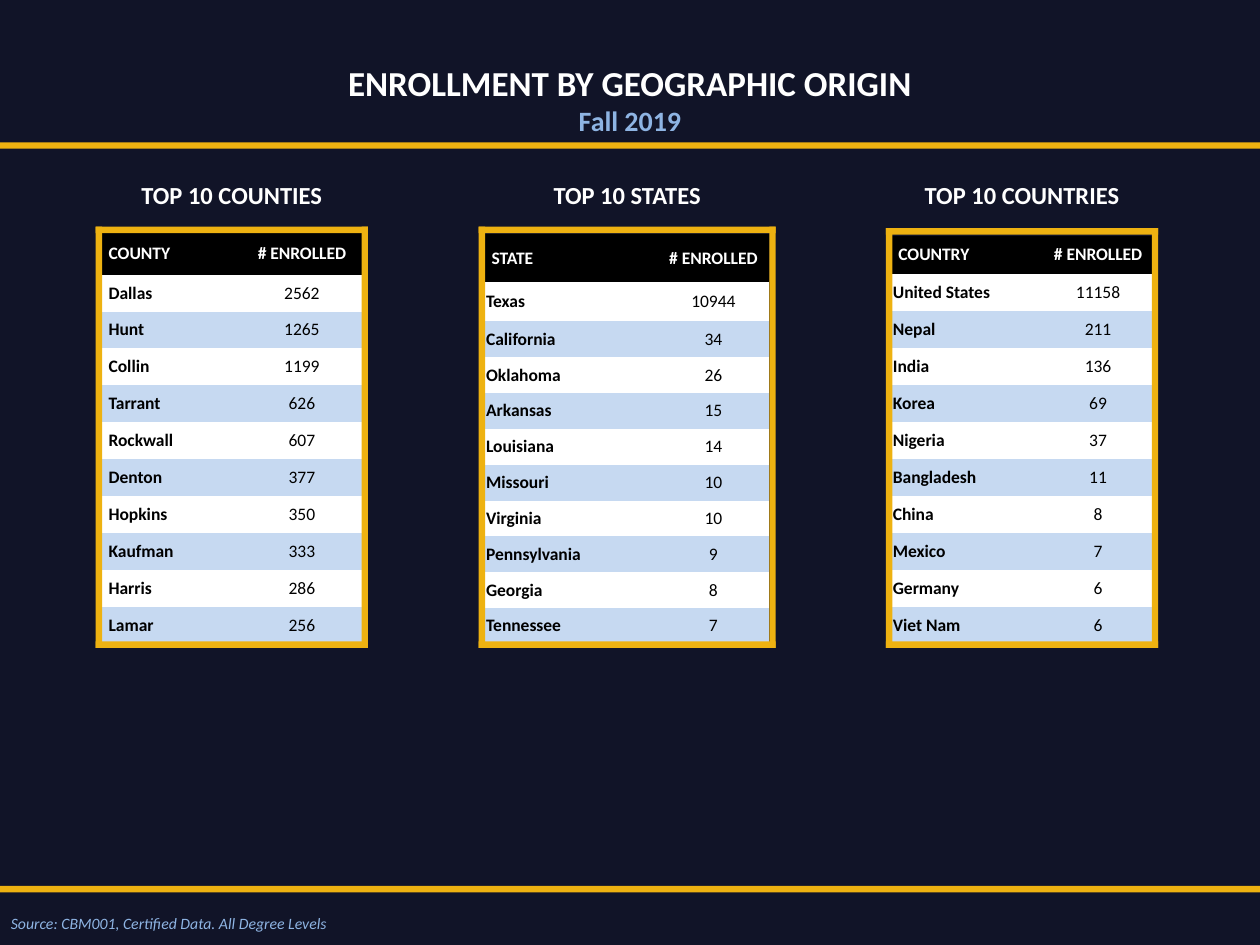
from dataclasses import dataclass

from pptx import Presentation
from pptx import util as u
from pptx.dml.color import RGBColor
from pptx.enum import shapes, text
from pptx.util import Cm


@dataclass(frozen=True)
class Theme:
    """Colours, typeface and type sizes of the deck."""
    font: str = "Calibri"
    navy: str = "111428"
    gold: str = "EEB211"
    sky: str = "8EB4E3"
    band: str = "C6D9F1"
    white: str = "FFFFFF"
    black: str = "000000"
    title: int = 20
    subtitle: int = 16
    heading: int = 14
    cell: int = 10
    source: int = 9


@dataclass(frozen=True)
class Ranking:
    """One top-ten table with its frame; lengths are centimetres."""
    heading: str
    label: str
    rows: list
    frame: tuple
    left: float
    top: float
    columns: tuple
    header: float
    first: float
    inset: float


THEME = Theme()
BAR = 0.13
FRAME_BOTTOM = 13.06
TABLE_BOTTOM = 12.98
PLAIN_STYLE = "{2D5ABB26-0587-4C30-8999-92F81FD0307C}"

RANKINGS = [
    Ranking(
        "TOP 10 COUNTIES", "COUNTY",
        [("Dallas", 2562), ("Hunt", 1265), ("Collin", 1199), ("Tarrant", 626),
         ("Rockwall", 607), ("Denton", 377), ("Hopkins", 350),
         ("Kaufman", 333), ("Harris", 286), ("Lamar", 256)],
        frame=(1.93, 4.57, 5.49), left=2.06, top=4.7, columns=(2.82, 2.41),
        header=0.84, first=0.74, inset=0.13),
    Ranking(
        "TOP 10 STATES", "STATE",
        [("Texas", 10944), ("California", 34), ("Oklahoma", 26),
         ("Arkansas", 15), ("Louisiana", 14), ("Missouri", 10),
         ("Virginia", 10), ("Pennsylvania", 9), ("Georgia", 8),
         ("Tennessee", 7)],
        frame=(9.65, 4.57, 5.99), left=9.78, top=4.72, columns=(3.48, 2.24),
        header=0.97, first=0.79, inset=0.02),
    Ranking(
        "TOP 10 COUNTRIES", "COUNTRY",
        [("United States", 11158), ("Nepal", 211), ("India", 136),
         ("Korea", 69), ("Nigeria", 37), ("Bangladesh", 11), ("China", 8),
         ("Mexico", 7), ("Germany", 6), ("Viet Nam", 6)],
        frame=(17.86, 4.6, 5.49), left=17.98, top=4.75, columns=(3.05, 2.21),
        header=0.78, first=0.74, inset=0.02),
]


def write(para, words, size, color, bold=False, italic=False, centered=False):
    """Fill a paragraph with uniformly styled words."""
    para.text = words
    para.alignment = text.PP_ALIGN.CENTER if centered else text.PP_ALIGN.LEFT
    font = para.font
    font.name, font.size = THEME.font, u.Pt(size)
    font.bold, font.italic = bold, italic
    font.color.rgb = RGBColor.from_string(color)


def add_text(page, left, top, width, height):
    """Add a wrapping text box and return its text frame."""
    box = page.shapes.add_textbox(Cm(left), Cm(top), Cm(width), Cm(height))
    box.text_frame.word_wrap = True
    return box.text_frame


def add_bar(page, left, top, width, height):
    """Add a plain gold bar."""
    bar = page.shapes.add_shape(
        shapes.MSO_SHAPE.RECTANGLE, Cm(left), Cm(top), Cm(width), Cm(height))
    bar.shadow.inherit = False
    bar.fill.solid()
    bar.fill.fore_color.rgb = RGBColor.from_string(THEME.gold)
    bar.line.fill.background()


def add_frame(page, left, top, width):
    """Add four gold bars around a table."""
    height = FRAME_BOTTOM - top
    for y in (top, FRAME_BOTTOM - BAR):
        add_bar(page, left, y, width, BAR)
    for x in (left, left + width - BAR):
        add_bar(page, x, top, BAR, height)


def fill_cell(cell, words, fill, color, inset, bold, centered):
    """Style one table cell and write its words."""
    cell.fill.solid()
    cell.fill.fore_color.rgb = RGBColor.from_string(fill)
    cell.vertical_anchor = text.MSO_ANCHOR.MIDDLE
    cell.margin_left = cell.margin_right = Cm(inset)
    cell.margin_top = cell.margin_bottom = Cm(inset)
    write(cell.text_frame.paragraphs[0], words, THEME.cell, color,
          bold=bold, centered=centered)


def add_ranking_table(page, ranking):
    """Add the banded table of one ranking."""
    body = TABLE_BOTTOM - ranking.top - ranking.header - ranking.first
    others = len(ranking.rows) - 1
    heights = [ranking.header, ranking.first] + [body / others] * others
    table = page.shapes.add_table(
        len(heights), 2, Cm(ranking.left), Cm(ranking.top),
        Cm(sum(ranking.columns)), Cm(sum(heights))).table
    table._tbl.tblPr[0].text = PLAIN_STYLE
    for column, width in zip(table.columns, ranking.columns):
        column.width = Cm(width)
    for row, height in zip(table.rows, heights):
        row.height = Cm(height)
    for index, words in enumerate((ranking.label, "# ENROLLED")):
        fill_cell(table.cell(0, index), words, THEME.black, THEME.white,
                  0.13, True, index == 1)
    for index, (place, count) in enumerate(ranking.rows, 1):
        fill = THEME.white if index % 2 else THEME.band
        fill_cell(table.cell(index, 0), place, fill, THEME.black,
                  ranking.inset, True, False)
        fill_cell(table.cell(index, 1), str(count), fill, THEME.black,
                  0.02, False, True)


def add_ranking(page, ranking):
    """Add the heading, table and frame of one ranking."""
    left, top, width = ranking.frame
    heading = add_text(page, left, 3.51, width, 0.86)
    write(heading.paragraphs[0], ranking.heading, THEME.heading, THEME.white,
          bold=True, centered=True)
    add_ranking_table(page, ranking)
    add_frame(page, left, top, width)


def main():
    """Build and save the enrollment slide."""
    deck = Presentation()
    deck.slide_width, deck.slide_height = Cm(25.4), Cm(19.05)
    page = deck.slides.add_slide(deck.slide_layouts[6])
    page.background.fill.solid()
    page.background.fill.fore_color.rgb = RGBColor.from_string(THEME.navy)

    title = add_text(page, 0, 1.12, 25.4, 2.57)
    write(title.paragraphs[0], "ENROLLMENT BY GEOGRAPHIC ORIGIN", THEME.title,
          THEME.white, bold=True, centered=True)
    write(title.add_paragraph(), "Fall 2019", THEME.subtitle, THEME.sky,
          bold=True, centered=True)
    source = add_text(page, -0.03, 18.29, 7.01, 0.64)
    write(source.paragraphs[0],
          "Source: CBM001, Certified Data. All Degree Levels",
          THEME.source, THEME.sky, italic=True)
    for top in (2.87, 17.86):
        add_bar(page, 0, top, 25.4, BAR)
    for ranking in RANKINGS:
        add_ranking(page, ranking)
    deck.save("out.pptx")


if __name__ == "__main__":
    main()
